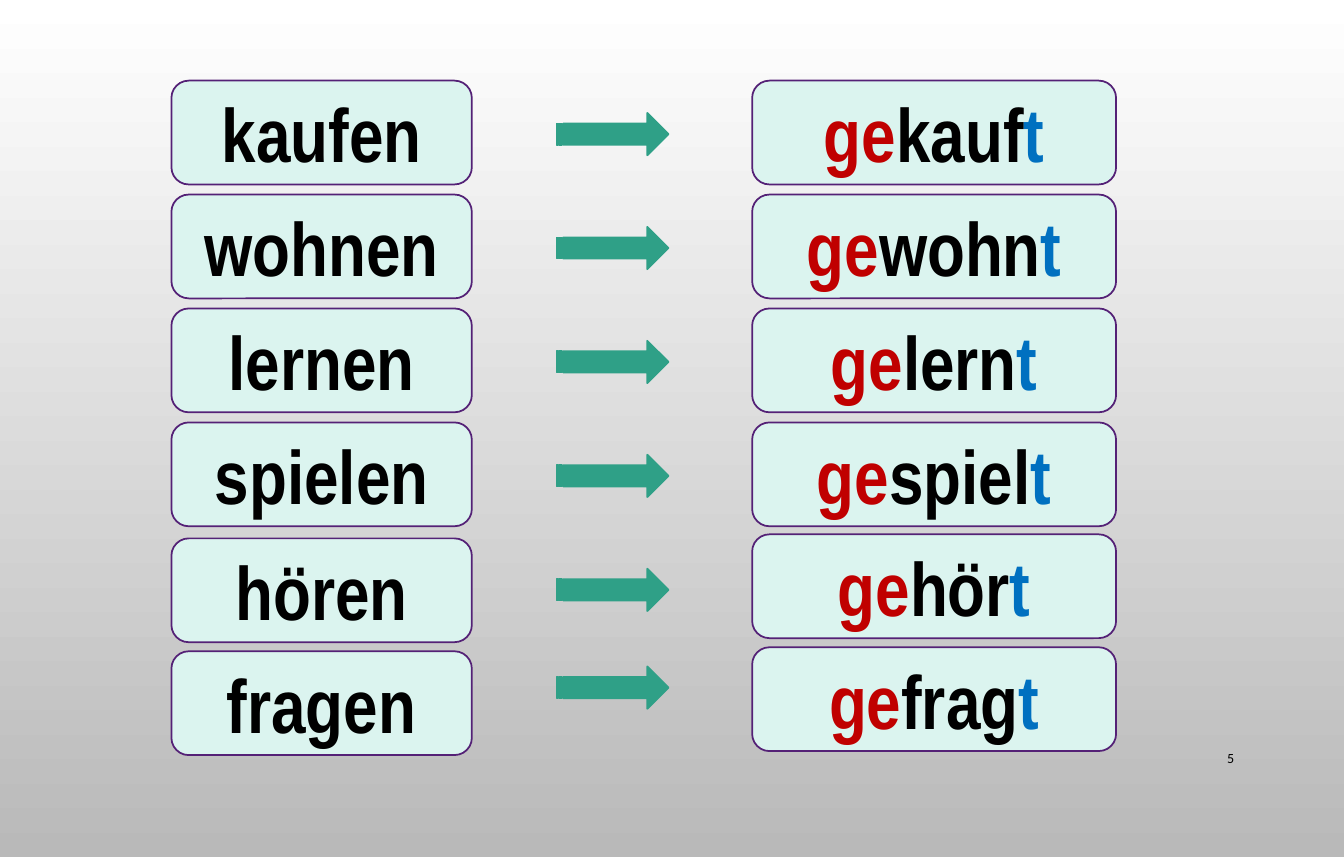
"""Build a slide that turns German infinitives into past participles."""
from pptx import Presentation
from pptx.dml.color import RGBColor
from pptx.enum.shapes import MSO_SHAPE
from pptx.enum.text import MSO_ANCHOR, PP_ALIGN
from pptx.util import Inches, Pt

STEMS = ["kauf", "wohn", "lern", "spiel", "hör", "frag"]
INFINITIVE_ENDING, PREFIX, PARTICIPLE_ENDING = "en", "ge", "t"
PAGE_NUMBER = "5"

BLACK, RED, BLUE = "000000", "C00000", "0070C0"
MINT, PURPLE, GREEN = "DBF4EF", "542176", "2FA087"
BACKGROUND = ["FFFFFF", "B9B9B9"]

FIRST_ROW, ROW_PITCH = 0.8, 1.13
WORD_HEIGHT, ARROW_HEIGHT = 1.03, 0.42
INFINITIVE_COLUMN, ARROW_COLUMN, PARTICIPLE_COLUMN = (1.7, 2.98), (5.52, 1.11), (7.46, 3.61)
ROW_NUDGES = {"hör": (0.02, 0, -0.02), "frag": (0.01, -0.16, -0.03)}


def rgb(value):
    return RGBColor.from_string(value)


def write(shape, runs, size, font, bold=False, align=PP_ALIGN.CENTER):
    frame = shape.text_frame
    frame.word_wrap = True
    frame.vertical_anchor = MSO_ANCHOR.MIDDLE
    paragraph = frame.paragraphs[0]
    paragraph.alignment = align
    for text, color in runs:
        run = paragraph.add_run()
        run.text = text
        run.font.size = Pt(size)
        run.font.name = font
        run.font.bold = bold
        run.font.color.rgb = rgb(color)


def add_block(slide, preset, column, top, height, fill, line):
    left, width = column
    block = slide.shapes.add_shape(
        preset, Inches(left), Inches(top), Inches(width), Inches(height))
    block.shadow.inherit = False
    block.fill.solid()
    block.fill.fore_color.rgb = rgb(fill)
    block.line.color.rgb = rgb(line)
    block.line.width = Pt(1.25)
    return block


def add_word(slide, column, top, runs):
    card = add_block(slide, MSO_SHAPE.ROUNDED_RECTANGLE, column, top, WORD_HEIGHT, MINT, PURPLE)
    write(card, runs, size=54, font="Arial Narrow", bold=True)


def paint_background(slide):
    fill = slide.background.fill
    fill.gradient()
    fill.gradient_angle = 270
    for position, (stop, color) in enumerate(zip(fill.gradient_stops, BACKGROUND)):
        stop.position = position
        stop.color.rgb = rgb(color)


def main():
    deck = Presentation()
    deck.slide_width, deck.slide_height = Inches(13.33), Inches(8.5)
    slide = deck.slides.add_slide(deck.slide_layouts[6])
    paint_background(slide)

    for row, stem in enumerate(STEMS):
        top = FIRST_ROW + row * ROW_PITCH
        infinitive_nudge, arrow_nudge, participle_nudge = ROW_NUDGES.get(stem, (0, 0, 0))
        arrow_top = top + 0.32 + arrow_nudge
        add_word(slide, INFINITIVE_COLUMN, top + infinitive_nudge,
                 [(stem + INFINITIVE_ENDING, BLACK)])
        add_block(slide, MSO_SHAPE.STRIPED_RIGHT_ARROW, ARROW_COLUMN, arrow_top,
                  ARROW_HEIGHT, GREEN, GREEN)
        add_word(slide, PARTICIPLE_COLUMN, top + participle_nudge,
                 [(PREFIX, RED), (stem, BLACK), (PARTICIPLE_ENDING, BLUE)])

    page_number = slide.shapes.add_textbox(Inches(11.5), Inches(7.29), Inches(0.84), Inches(0.45))
    write(page_number, [(PAGE_NUMBER, BLACK)], size=10, font="Calibri", align=PP_ALIGN.RIGHT)
    deck.save("out.pptx")


if __name__ == "__main__":
    main()
